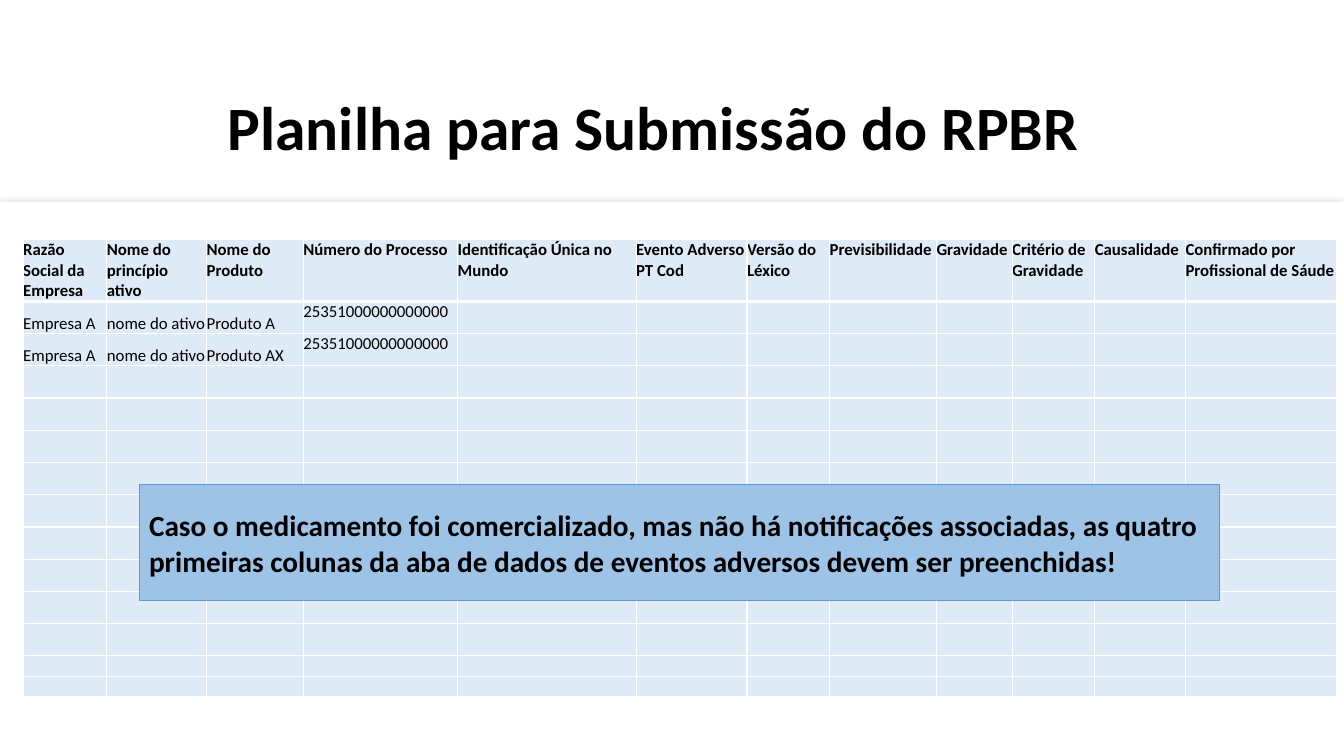
from dataclasses import dataclass

from lxml.etree import SubElement
from pptx import Presentation
from pptx.dml.color import RGBColor
from pptx.enum.shapes import MSO_SHAPE
from pptx.enum.text import MSO_ANCHOR, PP_ALIGN
from pptx.oxml.ns import qn
from pptx.util import Emu, Pt

EMU_PER_PX = 9144


@dataclass(frozen=True)
class Theme:
    font: str = "Calibri"
    text: str = "000000"
    panel: str = "FFFFFF"
    panel_shadow: str = "A6A6A6"
    cell: str = "DEEBF7"
    border: str = "FFFFFF"
    notice: str = "9DC3E6"
    notice_line: str = "5B9BD5"
    title_size: float = 44
    notice_size: float = 20.9
    table_size: float = 12


THEME = Theme()

HEADINGS = [
    ("Razão Social da Empresa", 83),
    ("Nome do princípio ativo", 99),
    ("Nome do Produto", 96),
    ("Número do Processo", 153),
    ("Identificação Única no Mundo", 177),
    ("Evento Adverso PT Cod", 110),
    ("Versão do Léxico", 82),
    ("Previsibilidade", 106),
    ("Gravidade", 75),
    ("Critério de Gravidade", 82),
    ("Causalidade", 90),
    ("Confirmado por Profissional de Sáude", 150),
]
PRODUCTS = ["Produto A", "Produto AX"]
PROCESS_COLUMN = 3
ROW_HEIGHTS = [61] + [32] * 11 + [20] * 2


def px(length):
    return Emu(length * EMU_PER_PX)


def color(code):
    return RGBColor.from_string(code)


def add_run(paragraph, wording, size, bold):
    run = paragraph.add_run()
    run.text = wording
    run.font.name = THEME.font
    run.font.size = Pt(size)
    run.font.bold = bold
    run.font.color.rgb = color(THEME.text)


def add_rectangle(slide, box, fill):
    rectangle = slide.shapes.add_shape(MSO_SHAPE.RECTANGLE, *map(px, box))
    rectangle.shadow.inherit = False
    rectangle.fill.solid()
    rectangle.fill.fore_color.rgb = color(fill)
    return rectangle


def add_panel(slide, box):
    panel = add_rectangle(slide, box, THEME.panel)
    panel.line.fill.background()
    effects = panel._element.spPr.find(qn("a:effectLst"))
    shadow = SubElement(effects, qn("a:outerShdw"), blurRad=str(Pt(5)), dist="0", dir="0")
    tint = SubElement(shadow, qn("a:srgbClr"), val=THEME.panel_shadow)
    SubElement(tint, qn("a:alpha"), val="42000")


def add_title(slide, box):
    title = slide.shapes.add_textbox(*map(px, box)).text_frame
    title.word_wrap = True
    title.vertical_anchor = MSO_ANCHOR.MIDDLE
    title.paragraphs[0].line_spacing = 0.9
    add_run(title.paragraphs[0], "Planilha para Submissão do RPBR", THEME.title_size, True)


def style_cell(cell, bottom_width):
    cell.margin_left = cell.margin_right = cell.margin_top = cell.margin_bottom = 0
    properties = cell._tc.get_or_add_tcPr()
    for side, width in (("L", 1), ("R", 1), ("T", 1), ("B", bottom_width)):
        border = SubElement(properties, qn(f"a:ln{side}"), w=str(Pt(width)))
        border_fill = SubElement(border, qn("a:solidFill"))
        SubElement(border_fill, qn("a:srgbClr"), val=THEME.border)
    cell.fill.solid()
    cell.fill.fore_color.rgb = color(THEME.cell)


def add_events_table(slide, box):
    events = slide.shapes.add_table(len(ROW_HEIGHTS), len(HEADINGS), *map(px, box)).table
    events.first_row = False
    events.horz_banding = False
    for column, (_, width) in zip(events.columns, HEADINGS):
        column.width = px(width)
    for row, height in zip(events.rows, ROW_HEIGHTS):
        row.height = px(height)

    entries = [[heading for heading, _ in HEADINGS]]
    entries += [["Empresa A", "nome do ativo", product, "25351000000000000"] for product in PRODUCTS]
    for row_index, row in enumerate(events.rows):
        wordings = entries[row_index] if row_index < len(entries) else []
        is_header = row_index == 0
        for column_index, cell in enumerate(row.cells):
            style_cell(cell, 3 if is_header else 1)
            paragraph = cell.text_frame.paragraphs[0]
            if column_index < len(wordings):
                add_run(paragraph, wordings[column_index], THEME.table_size, is_header)
                if not is_header and column_index < PROCESS_COLUMN:
                    cell.vertical_anchor = MSO_ANCHOR.BOTTOM
            else:
                SubElement(paragraph._p, qn("a:endParaRPr"), sz=str(int(THEME.table_size * 100)))


def add_notice(slide, box):
    notice = add_rectangle(slide, box, THEME.notice)
    notice.line.color.rgb = color(THEME.notice_line)
    notice.line.width = Pt(0.75)
    frame = notice.text_frame
    frame.word_wrap = True
    frame.vertical_anchor = MSO_ANCHOR.MIDDLE
    frame.paragraphs[0].alignment = PP_ALIGN.LEFT
    add_run(
        frame.paragraphs[0],
        "Caso o medicamento foi comercializado, mas não há notificações associadas, "
        "as quatro primeiras colunas da aba de dados de eventos adversos devem ser preenchidas!",
        THEME.notice_size,
        True,
    )


def main():
    presentation = Presentation()
    presentation.slide_width = px(1333)
    presentation.slide_height = px(750)
    slide = presentation.slides.add_slide(presentation.slide_layouts[6])
    add_panel(slide, (0, 200, 1333, 550))
    add_events_table(slide, (23, 238, 1303, 453))
    add_title(slide, (216, 72, 1193, 115))
    add_notice(slide, (138, 481, 1072, 115))
    presentation.save("out.pptx")


if __name__ == "__main__":
    main()
